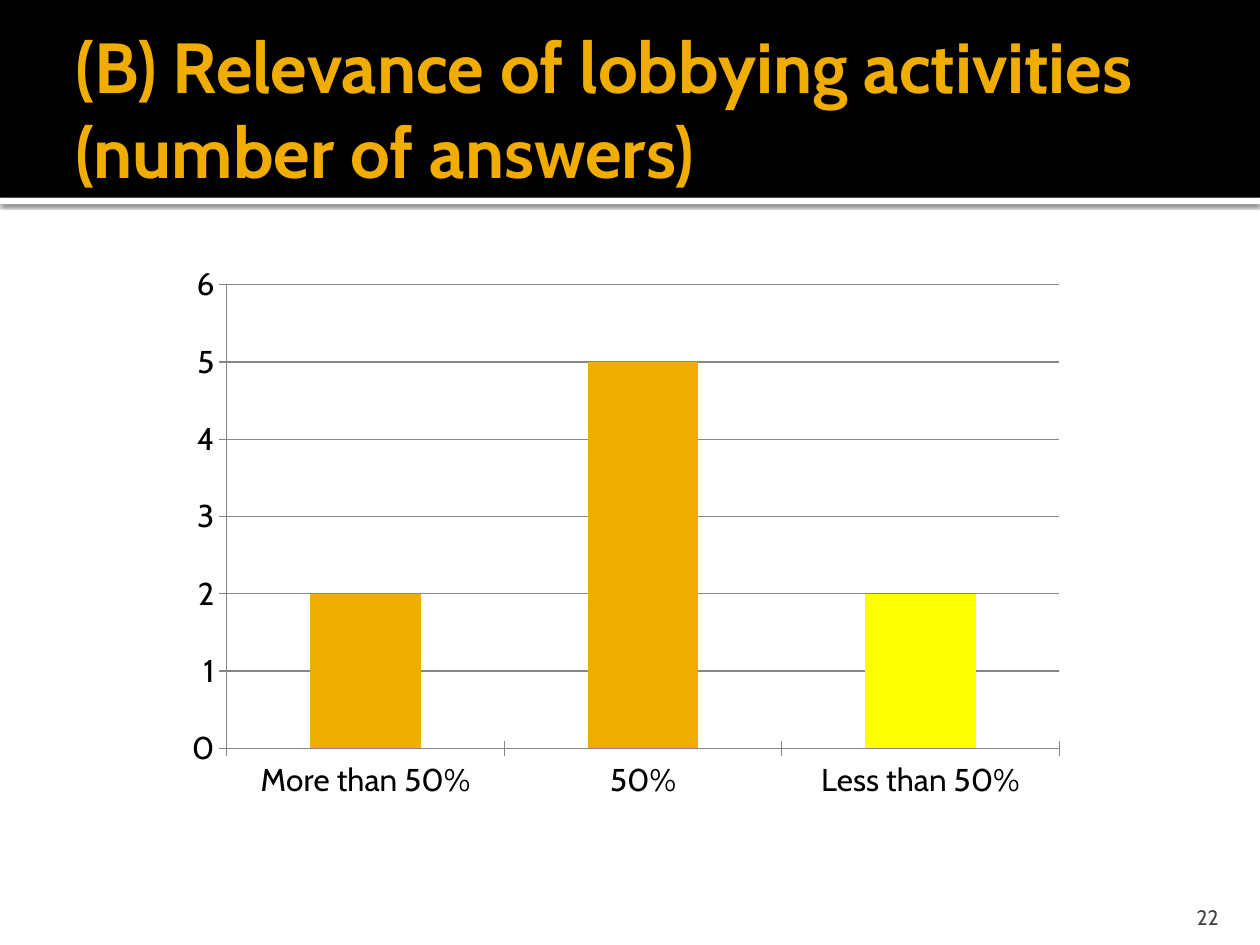
from dataclasses import dataclass

from lxml import etree
from pptx import Presentation
from pptx.chart import data as cd
from pptx.dml.color import RGBColor
from pptx.enum import chart as ch, shapes as sh, text as tx
from pptx.oxml import ns
from pptx.util import Inches, Pt


@dataclass(frozen=True)
class Theme:
    font: str = "Cabin"
    gold: str = "F0AD00"
    yellow: str = "FFFF00"
    black: str = "000000"
    white: str = "FFFFFF"
    gray: str = "454545"
    rule: str = "868686"
    head: float = 40.5
    label: float = 18
    small: float = 12


T = Theme()


def style(font, size, color, bold=False):
    font.name = T.font
    font.size = Pt(size)
    font.bold = bold
    font.color.rgb = RGBColor.from_string(color)


def write(shape, words, size, color, bold=False, align=tx.PP_ALIGN.LEFT,
          anchor=tx.MSO_ANCHOR.MIDDLE, inset=(0.1, 0.05, 0.1, 0.05)):
    frame = shape.text_frame
    frame.word_wrap = True
    frame.auto_size = tx.MSO_AUTO_SIZE.NONE
    frame.vertical_anchor = anchor
    (frame.margin_left, frame.margin_top,
     frame.margin_right, frame.margin_bottom) = map(Inches, inset)
    par = frame.paragraphs[0]
    par.alignment = align
    run = par.add_run()
    run.text = words
    style(run.font, size, color, bold)


def add_bar(slide, box, color):
    bar = slide.shapes.add_shape(sh.MSO_SHAPE.RECTANGLE, *map(Inches, box))
    bar.shadow.inherit = False
    bar.fill.solid()
    bar.fill.fore_color.rgb = RGBColor.from_string(color)
    bar.line.fill.background()
    return bar


def cast(shape, color, blur, dist, alpha):
    effect = shape.element.spPr.find(ns.qn("a:effectLst"))
    shade = etree.SubElement(
        effect, ns.qn("a:outerShdw"), blurRad=str(Pt(blur)),
        dist=str(Pt(dist)), dir="5400000", algn="t", rotWithShape="0")
    tone = etree.SubElement(shade, ns.qn("a:srgbClr"), val=color)
    etree.SubElement(tone, ns.qn("a:alpha"), val=str(alpha * 1000))


def add_head(slide, box, words):
    left, top, width, height = box
    strip = add_bar(slide, (left, top + height, width, 0.05), T.white)
    cast(strip, T.black, 2.5, 0.8, 60)
    add_bar(slide, box, T.black)
    title = slide.shapes.title
    title.left, title.top = Inches(left + 0.5), Inches(top + 0.17)
    title.width, title.height = Inches(width - 1), Inches(1.37)
    write(title, words, T.head, T.gold, bold=True,
          inset=(0.1, 0.05, 0.05, 0.05))
    title.element.getparent().append(title.element)


def add_graph(slide, box):
    data = cd.CategoryChartData(number_format="General")
    data.categories = ["More than 50%", "50%", "Less than 50%"]
    data.add_series("Series 1", (2, 5, 2))
    chart = slide.shapes.add_chart(
        ch.XL_CHART_TYPE.COLUMN_CLUSTERED, *map(Inches, box), data).chart
    chart.has_legend = False
    chart.has_title = False
    style(chart.font, T.label, T.black)

    plot = chart.plots[0]
    plot.gap_width = 150
    plot.vary_by_categories = False
    bars = plot.series[0]
    for part, color in ((bars, T.gold), (bars.points[2], T.yellow)):
        part.format.fill.solid()
        part.format.fill.fore_color.rgb = RGBColor.from_string(color)

    scale = chart.value_axis
    scale.minimum_scale, scale.maximum_scale = 0, 6
    scale.major_unit = 1
    scale.has_major_gridlines = True
    for axis in (chart.category_axis, scale):
        axis.major_tick_mark = ch.XL_TICK_MARK.CROSS
    for part in (chart.category_axis, scale, scale.major_gridlines):
        part.format.line.color.rgb = RGBColor.from_string(T.rule)
        part.format.line.width = Pt(0.75)


def add_page(slide, box, words):
    page = slide.shapes.add_textbox(*map(Inches, box))
    write(page, words, T.small, T.gray, align=tx.PP_ALIGN.RIGHT,
          anchor=tx.MSO_ANCHOR.BOTTOM, inset=(0.1, 0.05, 0.1, 0))


def main():
    deck = Presentation()
    deck.slide_width, deck.slide_height = Inches(10), Inches(7.5)
    slide = deck.slides.add_slide(deck.slide_layouts[5])
    add_head(slide, (0, 0, 10, 1.57),
             "(B) Relevance of lobbying activities (number of answers)")
    add_page(slide, (8.97, 7.08, 0.8, 0.3), "22")
    add_graph(slide, (1.38, 2.02, 7.17, 4.41))
    deck.save("out.pptx")


if __name__ == "__main__":
    main()
